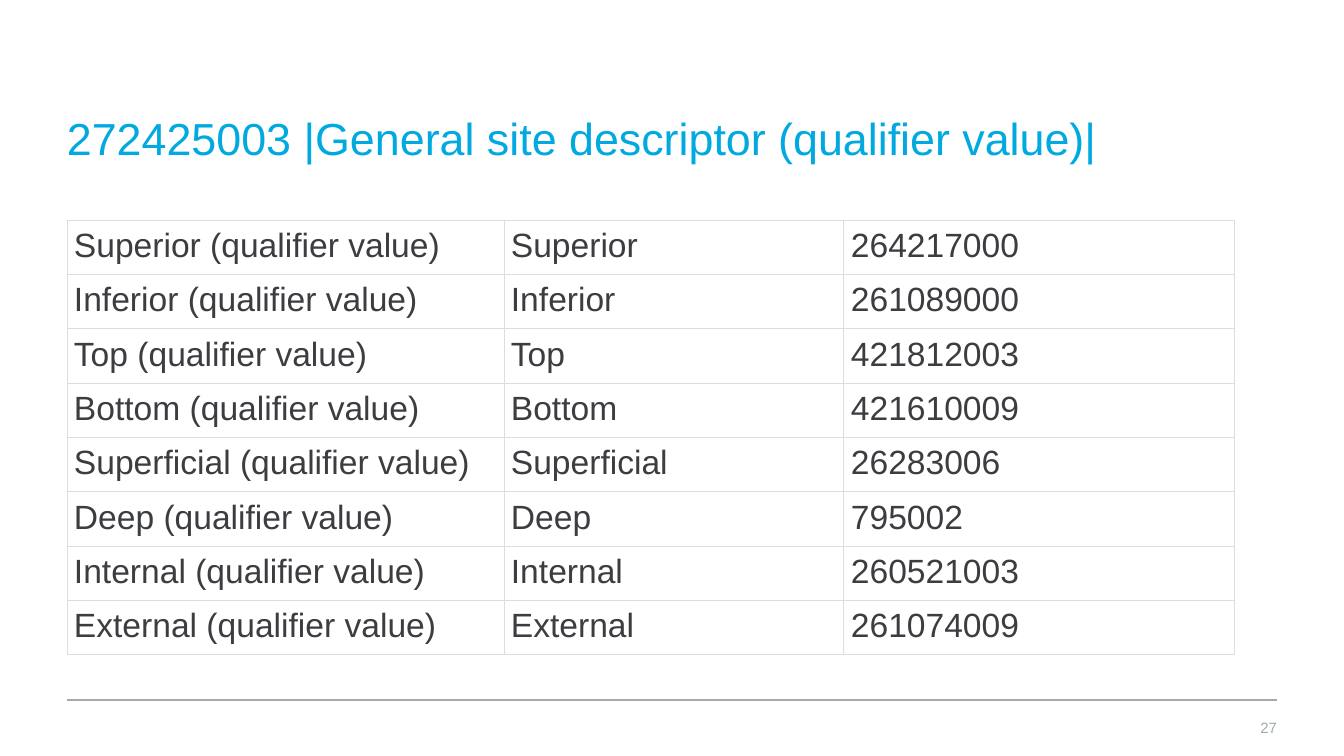
import pptx
import pptx.util
import pptx.dml.color
import pptx.enum.shapes
import pptx.enum.text
import pptx.oxml
import pptx.oxml.ns
from lxml import etree

TITLE = "272425003 |General site descriptor (qualifier value)|"
PAGE = "27"
SITES = [
    ("Superior", "264217000"),
    ("Inferior", "261089000"),
    ("Top", "421812003"),
    ("Bottom", "421610009"),
    ("Superficial", "26283006"),
    ("Deep", "795002"),
    ("Internal", "260521003"),
    ("External", "261074009"),
]
THEME = {
    "font": "Arial",
    "title": "00A9E0", "text": "3B3D40", "muted": "A2AAAD",
    "border": "DDDDDD", "cell": "FFFFFF",
    "title_size": 24, "table_size": 18, "page_size": 8,
}
WIDTH, HEIGHT = 1344, 756
LEFT, RIGHT, RULE_Y = 67, 1277, 700
TABLE_TOP, ROW_HEIGHT, CELL_PAD = 220, 50, 7
COL_WIDTHS = (437, 340, 391)


def px(n):
    return pptx.util.Emu(round(n * 914400 / 134.4))


def rgb(name):
    return pptx.dml.color.RGBColor.from_string(THEME[name])


def write(tf, text, size, color, align="LEFT"):
    p = tf.paragraphs[0]
    p.alignment = getattr(pptx.enum.text.PP_ALIGN, align)
    r = p.add_run()
    r.text = text
    r.font.name = THEME["font"]
    r.font.size = pptx.util.Pt(THEME[size])
    r.font.color.rgb = rgb(color)


def add_text(shapes, box, text, size, color, align="LEFT", bottom=0):
    tf = shapes.add_textbox(*map(px, box)).text_frame
    tf.word_wrap = True
    tf.vertical_anchor = pptx.enum.text.MSO_ANCHOR.MIDDLE
    tf.margin_left = tf.margin_right = tf.margin_top = 0
    tf.margin_bottom = px(bottom)
    write(tf, text, size, color, align)


def add_borders(cell):
    tcPr = cell._tc.get_or_add_tcPr()
    for i, side in enumerate(("lnL", "lnR", "lnT", "lnB")):
        ln = pptx.oxml.parse_xml(
            f'<a:{side} {pptx.oxml.ns.nsdecls("a")} w="{pptx.util.Pt(0.5)}">'
            f'<a:solidFill><a:srgbClr val="{THEME["border"]}"/></a:solidFill></a:{side}>')
        tcPr.insert(i, ln)


def add_site_table(shapes):
    rows = [(f"{name} (qualifier value)", name, code) for name, code in SITES]
    table = shapes.add_table(
        len(rows), len(COL_WIDTHS), px(LEFT), px(TABLE_TOP),
        px(sum(COL_WIDTHS)), px(ROW_HEIGHT * len(rows))).table
    table.first_row = table.horz_banding = False
    for col, width in zip(table.columns, COL_WIDTHS):
        col.width = px(width)
    for i, row in enumerate(rows):
        for j, text in enumerate(row):
            cell = table.cell(i, j)
            cell.margin_left = cell.margin_right = px(CELL_PAD)
            cell.margin_top = cell.margin_bottom = px(CELL_PAD)
            cell.fill.solid()
            cell.fill.fore_color.rgb = rgb("cell")
            add_borders(cell)
            write(cell.text_frame, text, "table_size", "text")


def add_rule(shapes):
    line = shapes.add_connector(
        pptx.enum.shapes.MSO_CONNECTOR.STRAIGHT,
        px(RIGHT), px(RULE_Y), px(LEFT), px(RULE_Y))
    line.line.color.rgb = rgb("muted")
    line.line.width = pptx.util.Pt(0.75)
    etree.SubElement(line._element.spPr, pptx.oxml.ns.qn("a:effectLst"))


def main():
    prs = pptx.Presentation()
    prs.slide_width, prs.slide_height = px(WIDTH), px(HEIGHT)
    s = prs.slides.add_slide(prs.slide_layouts[6])
    add_rule(s.shapes)
    add_text(s.shapes, (LEFT, 122, RIGHT - LEFT, 83), TITLE,
             "title_size", "title", bottom=51)
    add_text(s.shapes, (RIGHT - 65, RULE_Y, 65, HEIGHT - RULE_Y), PAGE,
             "page_size", "muted", align="RIGHT")
    add_site_table(s.shapes)
    prs.save("out.pptx")


if __name__ == "__main__":
    main()
